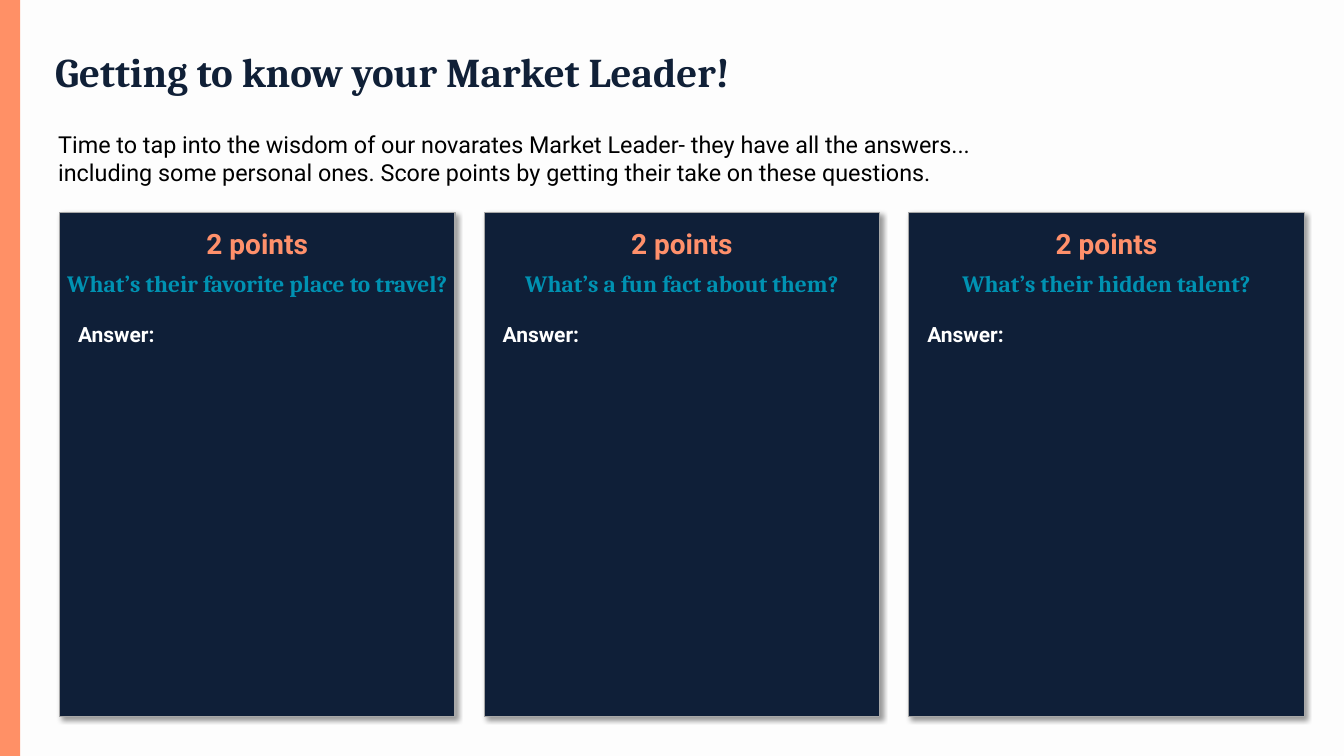
from lxml import etree
from pptx import Presentation
from pptx.dml.color import RGBColor
from pptx.enum.shapes import MSO_SHAPE
from pptx.enum.text import MSO_ANCHOR, PP_ALIGN
from pptx.oxml.ns import qn
from pptx.util import Cm, Pt

RECTANGLE = MSO_SHAPE.RECTANGLE
TOP, MIDDLE = MSO_ANCHOR.TOP, MSO_ANCHOR.MIDDLE
LEFT, CENTER = PP_ALIGN.LEFT, PP_ALIGN.CENTER

COLORS = {
    "background": "FDFDFD",
    "bar": "FF9066",
    "title": "102037",
    "body": "000000",
    "card": "0F1F38",
    "border": "A7A7A7",
    "points": "FF906B",
    "question": "0092B2",
    "answer": "FFFFFF",
}
FORMATS = {
    "title": {"name": "Cambria", "size": Pt(35), "bold": True},
    "body": {"name": "Roboto", "size": Pt(20), "bold": False},
    "points": {"name": "Roboto", "size": Pt(24), "bold": True},
    "question": {"name": "Cambria", "size": Pt(20), "bold": True},
    "answer": {"name": "Roboto", "size": Pt(18), "bold": True},
}
QUESTIONS = [
    "What’s their favorite place to travel?",
    "What’s a fun fact about them?",
    "What’s their hidden talent?",
]
CARD_LEFT, CARD_TOP, CARD_WIDTH, CARD_HEIGHT = 1.8, 6.43, 11.96, 15.24
CARD_PITCH = 12.84


class SlideBuilder:
    """Hold the style and the current slide, and add its elements."""

    def __init__(self, presentation):
        self.slide = presentation.slides.add_slide(presentation.slide_layouts[5])
        fill = self.slide.background.fill
        fill.solid()
        fill.fore_color.rgb = self.color("background")

    def color(self, name):
        return RGBColor.from_string(COLORS[name])

    def rectangle(self, left, top, width, height, color):
        shape = self.slide.shapes.add_shape(
            RECTANGLE, Cm(left), Cm(top), Cm(width), Cm(height))
        shape.shadow.inherit = False
        shape.fill.solid()
        shape.fill.fore_color.rgb = self.color(color)
        shape.line.fill.background()
        return shape

    def card(self, left):
        shape = self.rectangle(left, CARD_TOP, CARD_WIDTH, CARD_HEIGHT, "card")
        shape.line.color.rgb = self.color("border")
        shape.line.width = Pt(1)
        effects = shape._element.spPr.find(qn("a:effectLst"))
        shadow = etree.SubElement(
            effects, qn("a:outerShdw"), blurRad=str(Pt(4)), dist=str(Pt(3)),
            dir="2700000", algn="tl", rotWithShape="0")
        black = etree.SubElement(shadow, qn("a:srgbClr"), val="000000")
        etree.SubElement(black, qn("a:alpha"), val="40000")

    def fill_text(self, shape, text, style, alignment, anchor, margins):
        frame = shape.text_frame
        values = {"word_wrap": True, "vertical_anchor": anchor, **margins}
        for name, value in values.items():
            setattr(frame, name, value)
        frame.text = text
        paragraph = frame.paragraphs[0]
        paragraph.alignment = alignment
        for name, value in FORMATS[style].items():
            setattr(paragraph.font, name, value)
        paragraph.font.color.rgb = self.color(style)
        return paragraph

    def title(self, left, top, width, height, text):
        shape = self.slide.shapes.title
        shape.left, shape.top = Cm(left), Cm(top)
        shape.width, shape.height = Cm(width), Cm(height)
        margins = {"margin_left": Cm(0.25), "margin_top": Cm(0.25),
                   "margin_right": Cm(0.13), "margin_bottom": Cm(0.25)}
        paragraph = self.fill_text(shape, text, "title", LEFT, MIDDLE, margins)
        paragraph.line_spacing = 0.9

    def text(self, left, top, width, height, text, style, alignment=LEFT):
        shape = self.slide.shapes.add_textbox(
            Cm(left), Cm(top), Cm(width), Cm(height))
        margins = {f"margin_{side}": Cm(0.13)
                   for side in ("left", "top", "right", "bottom")}
        self.fill_text(shape, text, style, alignment, TOP, margins)


def main():
    presentation = Presentation()
    presentation.slide_width, presentation.slide_height = Cm(40.64), Cm(22.86)
    builder = SlideBuilder(presentation)
    builder.rectangle(0, 0, 0.61, 22.86, "bar")
    builder.title(1.42, 0.69, 27.91, 3.12, "Getting to know your Market Leader!")
    builder.text(
        1.63, 3.81, 30.02, 1.96,
        "Time to tap into the wisdom of our novarates Market Leader- they have "
        "all the answers... including some personal ones. Score points by "
        "getting their take on these questions.", "body")
    for index, question in enumerate(QUESTIONS):
        left = CARD_LEFT + index * CARD_PITCH
        builder.card(left)
        builder.text(left, 6.71, CARD_WIDTH, 1.27, "2 points", "points", CENTER)
        builder.text(left, 8, CARD_WIDTH, 1.12, question, "question", CENTER)
        builder.text(left + 0.43, 9.58, CARD_WIDTH, 1.02, "Answer:", "answer")
    presentation.save("out.pptx")


if __name__ == "__main__":
    main()
